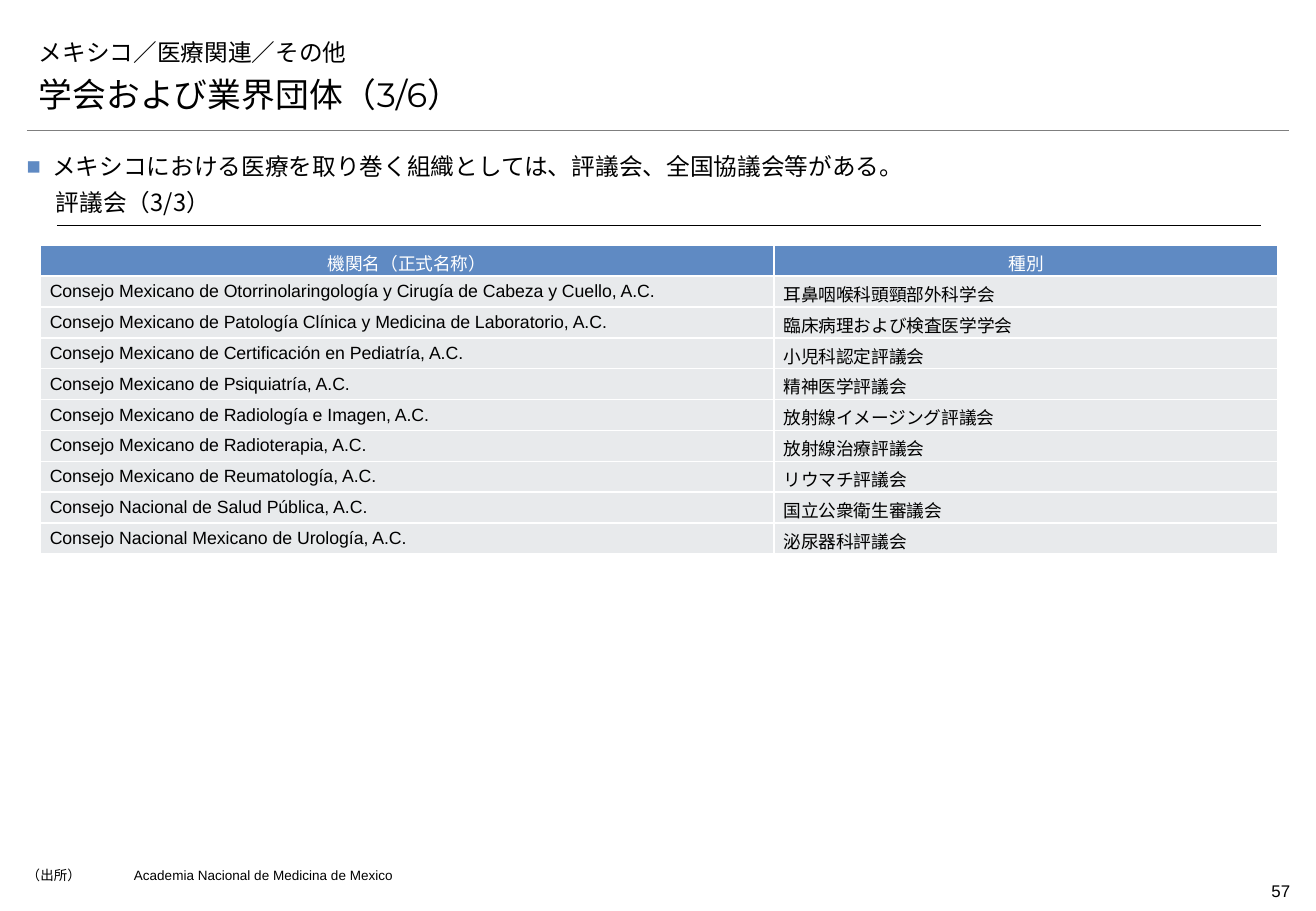
from lxml.etree import SubElement
from pptx import Presentation
from pptx.dml.color import RGBColor
from pptx.enum.text import MSO_ANCHOR, PP_ALIGN
from pptx.oxml.ns import qn
from pptx.util import Cm, Pt

COLORS = {"text": "000000", "blue": "5F8AC3", "gray": "E8EAEC",
          "rule": "7F7F7F", "white": "FFFFFF"}
JAPANESE_FONT = "Noto Sans CJK JP"

deck = Presentation()
deck.slide_width, deck.slide_height = Cm(27.51), Cm(19.05)
page = deck.slides.add_slide(deck.slide_layouts[6])


def write(frame, text, size, font="Arial", color="text", para_format=None):
    """Put one formatted run in the first paragraph of a text frame."""
    para = frame.paragraphs[0]
    for name, value in (para_format or {}).items():
        setattr(para, name, value)
    span = para.add_run()
    span.text = text
    for name, value in {"size": Pt(size), "name": font}.items():
        setattr(span.font, name, value)
    span.font.color.rgb = RGBColor.from_string(COLORS[color])
    SubElement(span.font._element, qn("a:ea"), typeface=JAPANESE_FONT)
    return para


def add_text(place, text, size, margins, anchor=MSO_ANCHOR.TOP, **style):
    """Add a wrapping text box; margins are left, top, right, bottom."""
    box = page.shapes.add_textbox(*map(Cm, place))
    left, top, right, bottom = map(Cm, margins)
    frame_format = {"word_wrap": True, "vertical_anchor": anchor,
                    "margin_left": left, "margin_top": top,
                    "margin_right": right, "margin_bottom": bottom}
    for name, value in frame_format.items():
        setattr(box.text_frame, name, value)
    return write(box.text_frame, text, size, **style)


# Rules under the title and under the subheading
for left, right, top, color, width in [(0.56, 26.95, 2.72, "rule", 0.25),
                                       (1.19, 26.37, 4.72, "text", 0.75)]:
    rule = page.shapes.add_connector(1, Cm(left), Cm(top), Cm(right), Cm(top))
    rule.line.color.rgb = RGBColor.from_string(COLORS[color])
    rule.line.width = Pt(width)
    SubElement(rule._element.spPr, qn("a:effectLst"))

# Title lines
for top, text, size in [(0.53, "メキシコ／医療関連／その他", 14),
                        (1.52, "学会および業界団体（3/6）", 20)]:
    add_text((0.56, top, 26.4, 0.99), text, size, (0.25, 0.13, 0.25, 0.13),
             MSO_ANCHOR.BOTTOM, font="Montserrat")

# Lead sentence with a square bullet
lead = add_text((0.56, 3.12, 26.4, 0.66),
                "メキシコにおける医療を取り巻く組織としては、評議会、全国協議会等がある。",
                14, (0, 0, 0, 0))
properties = lead._p.get_or_add_pPr()
properties.set("marL", str(Cm(0.53)))
properties.set("indent", str(Cm(-0.53)))
bullet_color = SubElement(properties, qn("a:buClr"))
SubElement(bullet_color, qn("a:srgbClr"), val=COLORS["blue"])
SubElement(properties, qn("a:buFont"), typeface="Arial")
SubElement(properties, qn("a:buChar"), char="■")
for name, value in {"alignment": PP_ALIGN.JUSTIFY, "line_spacing": 1.1,
                    "space_after": Pt(2)}.items():
    setattr(lead, name, value)

# Subheading
add_text((1.17, 3.94, 25.2, 0.79), "評議会（3/3）", 14, (0, 0.13, 0, 0.2),
         MSO_ANCHOR.BOTTOM, font=JAPANESE_FONT)

# Table of councils
councils = [
    ("機関名（正式名称）", "種別"),
    ("Consejo Mexicano de Otorrinolaringología y Cirugía de Cabeza y Cuello, A.C.",
     "耳鼻咽喉科頭頸部外科学会"),
    ("Consejo Mexicano de Patología Clínica y Medicina de Laboratorio, A.C.",
     "臨床病理および検査医学学会"),
    ("Consejo Mexicano de Certificación en Pediatría, A.C.", "小児科認定評議会"),
    ("Consejo Mexicano de Psiquiatría, A.C.", "精神医学評議会"),
    ("Consejo Mexicano de Radiología e Imagen, A.C.", "放射線イメージング評議会"),
    ("Consejo Mexicano de Radioterapia, A.C.", "放射線治療評議会"),
    ("Consejo Mexicano de Reumatología, A.C.", "リウマチ評議会"),
    ("Consejo Nacional de Salud Pública, A.C.", "国立公衆衛生審議会"),
    ("Consejo Nacional Mexicano de Urología, A.C.", "泌尿器科評議会"),
]
row_height = 0.645
table = page.shapes.add_table(len(councils), 2, Cm(0.84), Cm(5.13), Cm(25.88),
                              Cm(row_height * len(councils))).table
for column, width in zip(table.columns, (15.34, 10.54)):
    column.width = Cm(width)
cell_format = {"vertical_anchor": MSO_ANCHOR.MIDDLE,
               "margin_left": Cm(0.2), "margin_right": Cm(0.2),
               "margin_top": Cm(0.1), "margin_bottom": Cm(0.1)}
for row, texts in enumerate(councils):
    is_header = row == 0
    for column, text in enumerate(texts):
        cell = table.cell(row, column)
        for name, value in cell_format.items():
            setattr(cell, name, value)
        for side in ("lnL", "lnR", "lnT", "lnB"):
            border = SubElement(cell._tc.get_or_add_tcPr(), qn(f"a:{side}"),
                                w=str(Pt(1)))
            border_fill = SubElement(border, qn("a:solidFill"))
            SubElement(border_fill, qn("a:srgbClr"), val=COLORS["white"])
        cell.fill.solid()
        cell.fill.fore_color.rgb = RGBColor.from_string(
            COLORS["blue" if is_header else "gray"])
        write(cell.text_frame, text, 10.5,
              color="white" if is_header else "text",
              para_format={"alignment": PP_ALIGN.CENTER if is_header
                           else PP_ALIGN.LEFT})

# Source note and page number
note = add_text((0.56, 18.14, 24.4, 0.41),
                "（出所）\tAcademia Nacional de Medicina de Mexico", 8, (0, 0, 0, 0))
note._p.get_or_add_pPr().set("marL", str(Cm(0.97)))
note._p.get_or_add_pPr().set("indent", str(Cm(-0.97)))
add_text((24.97, 18.29, 2, 0.69), "57", 10, (0, 0.13, 0, 0.13),
         para_format={"alignment": PP_ALIGN.RIGHT})

deck.save("out.pptx")
